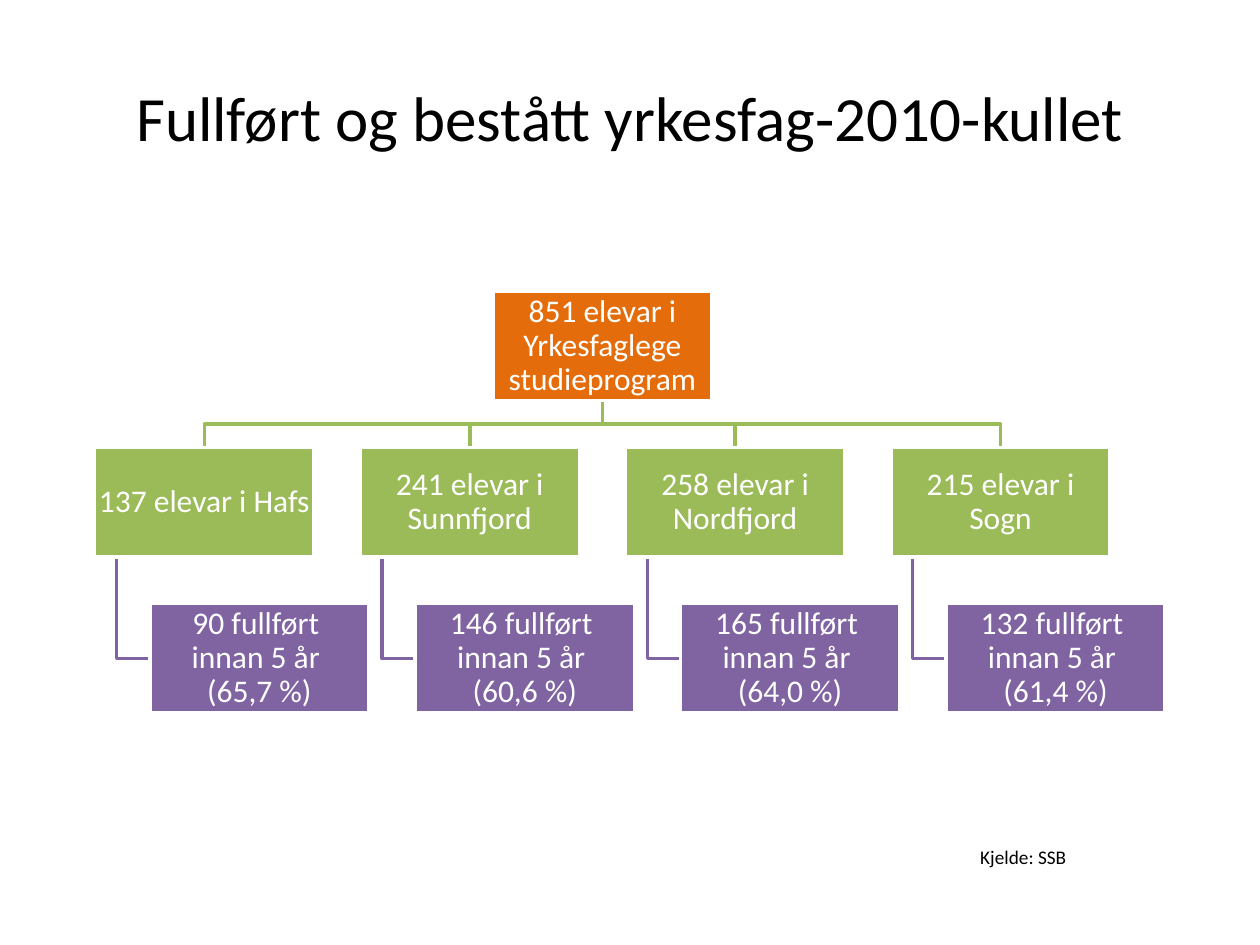
from pptx import Presentation
from pptx import util as u
from pptx.dml.color import RGBColor
from pptx.enum import shapes, text

COLOURS = {
    "root": "E46C0A",
    "region": "9BBB59",
    "result": "8064A2",
    "white": "FFFFFF",
    "black": "000000",
}

# Chart grid, in centimetres
BOX_W, BOX_H = 4.42, 2.21
LEFT, TOP = 1.91, 5.87
COLUMN_STEP, ROW_STEP = 5.35, 3.15
RESULT_INDENT, STEM_INDENT = 1.11, 0.44

REGIONS = [
    ("137 elevar i Hafs", "90", "65,7"),
    ("241 elevar i Sunnfjord", "146", "60,6"),
    ("258 elevar i Nordfjord", "165", "64,0"),
    ("215 elevar i Sogn", "132", "61,4"),
]


def colour(name):
    return RGBColor.from_string(COLOURS[name])


def set_format(target, values):
    for name, value in values.items():
        setattr(target, name, value)


class ChartSlide:
    """Holds the style and the current slide."""

    font = {"name": "Calibri", "bold": False}
    outline = u.Pt(2)
    node_frame = {
        "word_wrap": True,
        "vertical_anchor": text.MSO_ANCHOR.MIDDLE,
        "margin_left": u.Cm(0.03),
        "margin_top": u.Cm(0.03),
        "margin_right": u.Cm(0.03),
        "margin_bottom": u.Cm(0.03),
    }
    node_para = {"alignment": text.PP_ALIGN.CENTER, "line_spacing": 0.9}

    def __init__(self, slide):
        self.slide = slide

    def fill_text(self, shape, words, size, ink, frame, para_format):
        set_format(shape.text_frame, frame)
        para = shape.text_frame.paragraphs[0]
        para.text = words
        set_format(para, para_format)
        for span in para.runs:
            set_format(span.font, {**self.font, "size": u.Pt(size)})
            span.font.color.rgb = colour(ink)

    def label(self, words, place, size, frame, para_format):
        box = self.slide.shapes.add_textbox(*map(u.Cm, place))
        self.fill_text(box, words, size, "black", frame, para_format)

    def node(self, words, left, top, fill):
        box = self.slide.shapes.add_shape(
            shapes.MSO_SHAPE.RECTANGLE, *map(u.Cm, (left, top, BOX_W, BOX_H)))
        box.shadow.inherit = False
        box.fill.solid()
        box.fill.fore_color.rgb = colour(fill)
        box.line.color.rgb = colour("white")
        box.line.width = self.outline
        self.fill_text(box, words, 18, "white", self.node_frame, self.node_para)

    def branch(self, points, ink):
        start, *rest = [(u.Cm(x), u.Cm(y)) for x, y in points]
        builder = self.slide.shapes.build_freeform(*start)
        builder.add_line_segments(rest, close=False)
        line = builder.convert_to_shape()
        line.shadow.inherit = False
        line.fill.background()
        line.line.color.rgb = colour(ink)
        line.line.width = self.outline


def main():
    deck = Presentation()
    deck.slide_width, deck.slide_height = u.Cm(25.4), u.Cm(19.05)
    page = ChartSlide(deck.slides.add_slide(deck.slide_layouts[6]))

    # Title
    page.label("Fullført og bestått yrkesfag-2010-kullet", (1.27, 0.76, 22.86, 3.18), 36,
               {"word_wrap": True, "vertical_anchor": text.MSO_ANCHOR.MIDDLE},
               {"alignment": text.PP_ALIGN.CENTER})

    columns = [LEFT + i * COLUMN_STEP for i in range(len(REGIONS))]
    root_left = (columns[0] + columns[-1]) / 2
    region_top, result_top = TOP + ROW_STEP, TOP + 2 * ROW_STEP

    # Branches, behind the boxes
    root_x, root_bottom = root_left + BOX_W / 2, TOP + BOX_H
    bar_y = (root_bottom + region_top) / 2
    result_y = result_top + BOX_H / 2
    for left in columns:
        middle, stem = left + BOX_W / 2, left + STEM_INDENT
        page.branch([(root_x, root_bottom), (root_x, bar_y),
                     (middle, bar_y), (middle, region_top)], "region")
        page.branch([(stem, region_top + BOX_H), (stem, result_y),
                     (left + RESULT_INDENT, result_y)], "result")

    # Boxes
    page.node("851 elevar i Yrkesfaglege studieprogram", root_left, TOP, "root")
    for left, (region, count, share) in zip(columns, REGIONS):
        page.node(region, left, region_top, "region")
        page.node(f"{count} fullført \vinnan 5 år \v({share} %)",
                  left + RESULT_INDENT, result_top, "result")

    # Source
    page.label("Kjelde: SSB", (19.51, 16.92, 4.19, 0.74), 11,
               {"word_wrap": True, "auto_size": text.MSO_AUTO_SIZE.SHAPE_TO_FIT_TEXT},
               {"alignment": text.PP_ALIGN.LEFT})

    deck.save("out.pptx")


if __name__ == "__main__":
    main()
